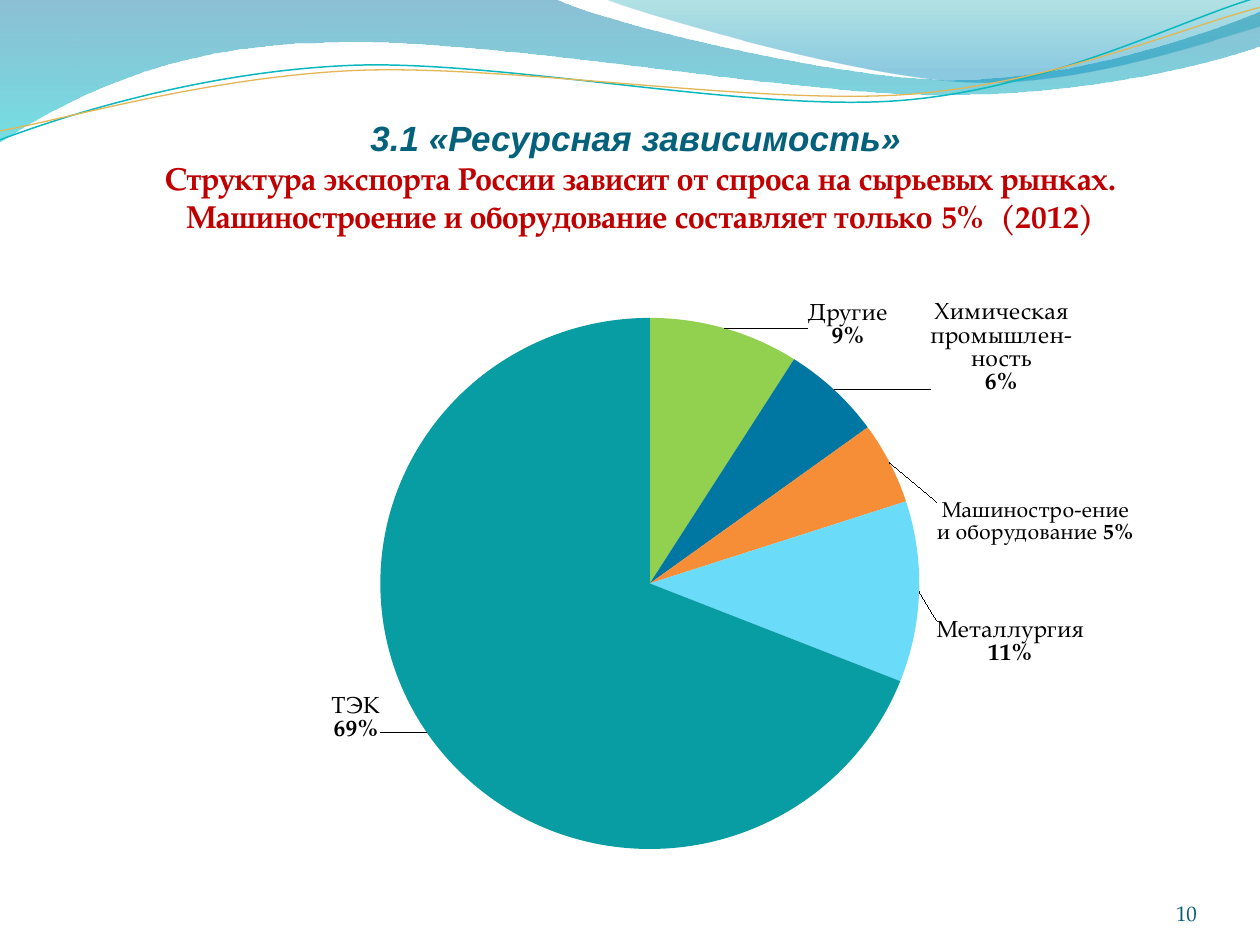
from lxml import etree
from pptx import Presentation
from pptx.chart.data import CategoryChartData
from pptx.dml.color import RGBColor
from pptx.enum.chart import XL_CHART_TYPE, XL_LABEL_POSITION
from pptx.enum.text import MSO_ANCHOR, PP_ALIGN
from pptx.oxml import parse_xml
from pptx.oxml.ns import nsdecls, qn
from pptx.util import Cm, Pt

PIE = XL_CHART_TYPE.PIE
OUT_END = XL_LABEL_POSITION.OUTSIDE_END
BOTTOM = MSO_ANCHOR.BOTTOM
CENTER, RIGHT = PP_ALIGN.CENTER, PP_ALIGN.RIGHT

SERIF, SANS = "TeX Gyre Pagella", "Arial"
HUES = {
    "blue": "0074A1", "cyan": "00C6CF", "green": "00A1A9", "sky": "008BBF",
    "teal": "0AB8BF", "gold": "E3B653", "head": "04617B", "red": "C00000",
    "page": "045D75", "black": "000000", "other": "92D050", "chem": "0076A3",
    "mach": "F68E38", "metal": "6BDBFA", "fuel": "089CA3",
}

WAVE = [
    (0, -0.03), (11.18, -0.03),
    (12.09, 0.43, 16.87, 1.6, 19.25, 1.6),
    (21.67, 1.6, 24.33, 0.66, 25.4, 0.23), (25.43, 0.91),
    (24.97, 1.12, 22.1, 1.93, 18.95, 1.91),
    (15.8, 1.91, 9.7, 0.71, 6.53, 0.86),
    (3.28, 0.89, 1.17, 2.11, -0.03, 2.87), (0, -0.03),
]
BAY = [
    (12.17, -0.03),
    (12.93, 0.28, 17.32, 1.57, 19.53, 1.65),
    (21.74, 1.75, 24.41, 0.81, 25.4, 0.53), (25.4, 0), (12.17, -0.03),
]
TEAL = [
    (0, 2.82),
    (1.22, 2.36, 4.01, 1.45, 7.04, 1.32),
    (10.03, 1.19, 15.06, 2.26, 18.11, 2.03),
    (21.16, 1.8, 23.83, 0.38, 25.35, -0.05),
]
GOLD = [
    (0, 2.64),
    (1.19, 2.44, 4.17, 1.55, 7.19, 1.42),
    (10.24, 1.3, 15.16, 2.11, 18.21, 1.91),
    (21.23, 1.7, 23.9, 0.53, 25.4, 0.15),
]

# category, value, hue, label lines, label size, label shift
PARTS = [
    ("Другие", 0.09, "other", ["Другие", "9%"], 13.5, (0.08, 0.05)),
    ("Химическая промышленность", 0.06, "chem",
     ["Химическая", "промышлен-", "ность", "6%"], 13.5, (0.09, 0.02)),
    ("Машиностроение и оборудование", 0.05, "mach",
     ["Машиностро-ение и оборудование 5%"], 12.5, (0.04, 0.15)),
    ("Металлургия", 0.11, "metal", ["Металлургия", "11%"], 13.5,
     (0.01, 0.09)),
    ("ТЭК", 0.69, "fuel", ["ТЭК", "69%"], 13.5, (-0.04, -0.07)),
]


def rgb(name):
    return RGBColor.from_string(HUES[name])


def style(font, hue, **look):
    for key, value in look.items():
        setattr(font, key, value)
    font.color.rgb = rgb(hue)


def add_path(slide, path, close):
    segs = [[(s[i] * 100, s[i + 1] * 100) for i in range(0, len(s), 2)]
            for s in path]
    pen = slide.shapes.build_freeform(*segs[0][0], scale=Cm(0.01))
    for seg in segs[1:]:
        pen.add_line_segments(seg, close=False)
    shape = pen.convert_to_shape()
    shape.shadow.inherit = False
    track = next(shape.element.iter(qn("a:path")))
    steps = iter(track.findall(qn("a:lnTo")))
    for seg in segs[1:]:
        group = [next(steps) for _ in seg]
        if len(group) == 3:
            curve = etree.Element(qn("a:cubicBezTo"))
            group[0].addprevious(curve)
            for step in group:
                curve.append(step[0])
                track.remove(step)
    if close:
        etree.SubElement(track, qn("a:close"))
    return shape


def add_band(slide, path, stops):
    shape = add_path(slide, path, True)
    shape.line.fill.background()
    shape.fill.gradient()
    shape.fill.gradient_angle = 270
    for stop, (place, hue, alpha) in zip(shape.fill.gradient_stops, stops):
        stop.position = place
        stop.color.rgb = rgb(hue)
    tags = shape.element.spPr.iter(qn("a:srgbClr"))
    for tag, (place, hue, alpha) in zip(tags, stops):
        etree.SubElement(tag, qn("a:alpha"), val=str(alpha * 1000))


def add_curve(slide, path, hue, width):
    shape = add_path(slide, path, False)
    shape.fill.background()
    shape.line.color.rgb = rgb(hue)
    shape.line.width = Pt(width)


def add_text(slide, box, align, lines, top=0):
    frame = slide.shapes.add_textbox(*map(Cm, box)).text_frame
    look = {"word_wrap": True, "vertical_anchor": BOTTOM, "margin_left": 0,
            "margin_right": 0, "margin_top": Cm(top), "margin_bottom": 0}
    for key, value in look.items():
        setattr(frame, key, value)
    para = frame.paragraphs[0]
    para.alignment = align
    for i, (text, hue, form) in enumerate(lines):
        if i:
            para.add_line_break()
        run = para.add_run()
        run.text = text
        style(run.font, hue, **form)


def layout(x, y, size=None):
    vals = [("x", x), ("y", y)]
    modes = ""
    if size:
        vals += zip("wh", size)
        modes = ('<c:layoutTarget val="inner"/><c:xMode val="edge"/>'
                 '<c:yMode val="edge"/>')
    body = modes + "".join(f'<c:{k} val="{v}"/>' for k, v in vals)
    return parse_xml(f'<c:layout {nsdecls("c")}><c:manualLayout>{body}'
                     "</c:manualLayout></c:layout>")


def add_label(point, lines, size):
    label = point.data_label
    frame = label.text_frame
    for i, line in enumerate(lines):
        para = frame.add_paragraph() if i else frame.paragraphs[0]
        para.alignment = CENTER
        head, gap, tail = line.rpartition(" ")
        for text in filter(None, (head + gap, tail)):
            run = para.add_run()
            run.text = text
            style(run.font, "black", name=SERIF, size=Pt(size),
                  bold=text.endswith("%"))
    label.position = OUT_END


def add_pie(slide, box):
    data = CategoryChartData(number_format="0%")
    data.categories = [part[0] for part in PARTS]
    data.add_series("Series 1", [part[1] for part in PARTS])
    chart = slide.shapes.add_chart(PIE, *map(Cm, box), data).chart
    chart.has_legend = chart.has_title = False
    style(chart.font, "black", name=SERIF, size=Pt(10))
    plot = chart.plots[0]
    plot.vary_by_categories = True
    series = plot.series[0]
    labels = series.data_labels
    look = {"show_value": True, "show_category_name": True,
            "number_format": "0%", "number_format_is_linked": False,
            "position": OUT_END}
    for key, value in look.items():
        setattr(labels, key, value)
    for i, (cat, value, hue, lines, size, shift) in enumerate(PARTS):
        point = series.points[i]
        point.format.fill.solid()
        point.format.fill.fore_color.rgb = rgb(hue)
        point.format.line.fill.background()
        add_label(point, lines, size)
    root = chart.element
    for tag, part in zip(root.iter(qn("c:dLbl")), PARTS):
        tag.find(qn("c:idx")).addnext(layout(*part[-1]))
    group = root.find(".//" + qn("c:dLbls"))
    for old in group.findall(qn("c:showLeaderLines")):
        group.remove(old)
    etree.SubElement(group, qn("c:showLeaderLines"), val="1")
    area = root.find(".//" + qn("c:plotArea"))
    for old in area.findall(qn("c:layout")):
        area.remove(old)
    area.insert(0, layout(0.23, 0.06, (0.54, 0.92)))


def main():
    deck = Presentation()
    deck.slide_width, deck.slide_height = Cm(25.4), Cm(19.05)
    slide = deck.slides.add_slide(deck.slide_layouts[6])
    add_band(slide, WAVE, [(0, "blue", 45), (1, "cyan", 55)])
    add_band(slide, BAY, [(0, "green", 30), (0.8, "sky", 45)])
    add_curve(slide, TEAL, "teal", 0.85)
    add_curve(slide, GOLD, "gold", 0.75)
    head = {"name": SANS, "size": Pt(20), "bold": True, "italic": True}
    body = {"name": SERIF, "size": Pt(18), "bold": True}
    add_text(slide, (1.5, 2.13, 22.83, 2.6), CENTER, [
        ("3.1 «Ресурсная зависимость» ", "head", head),
        ("Структура экспорта России зависит от спроса на сырьевых рынках. "
         "Машиностроение и оборудование составляет только 5%  (2012)",
         "red", body),
    ], top=0.13)
    add_text(slide, (22.02, 17.65, 2.11, 1.02), RIGHT,
             [("10", "page", {"name": SERIF, "size": Pt(12)})])
    add_pie(slide, (2.9, 5.54, 20.4, 11.81))
    deck.save("out.pptx")


if __name__ == "__main__":
    main()
